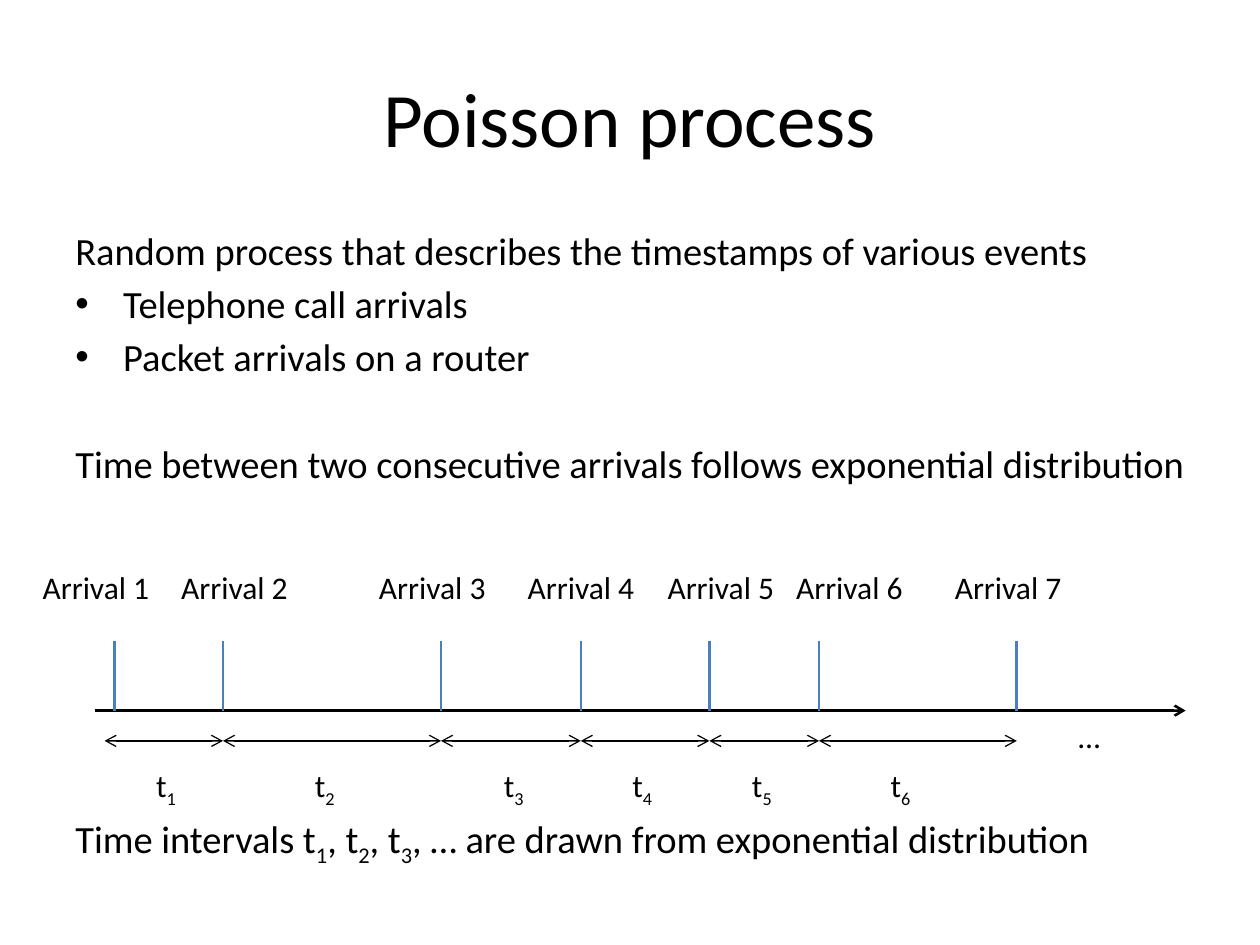
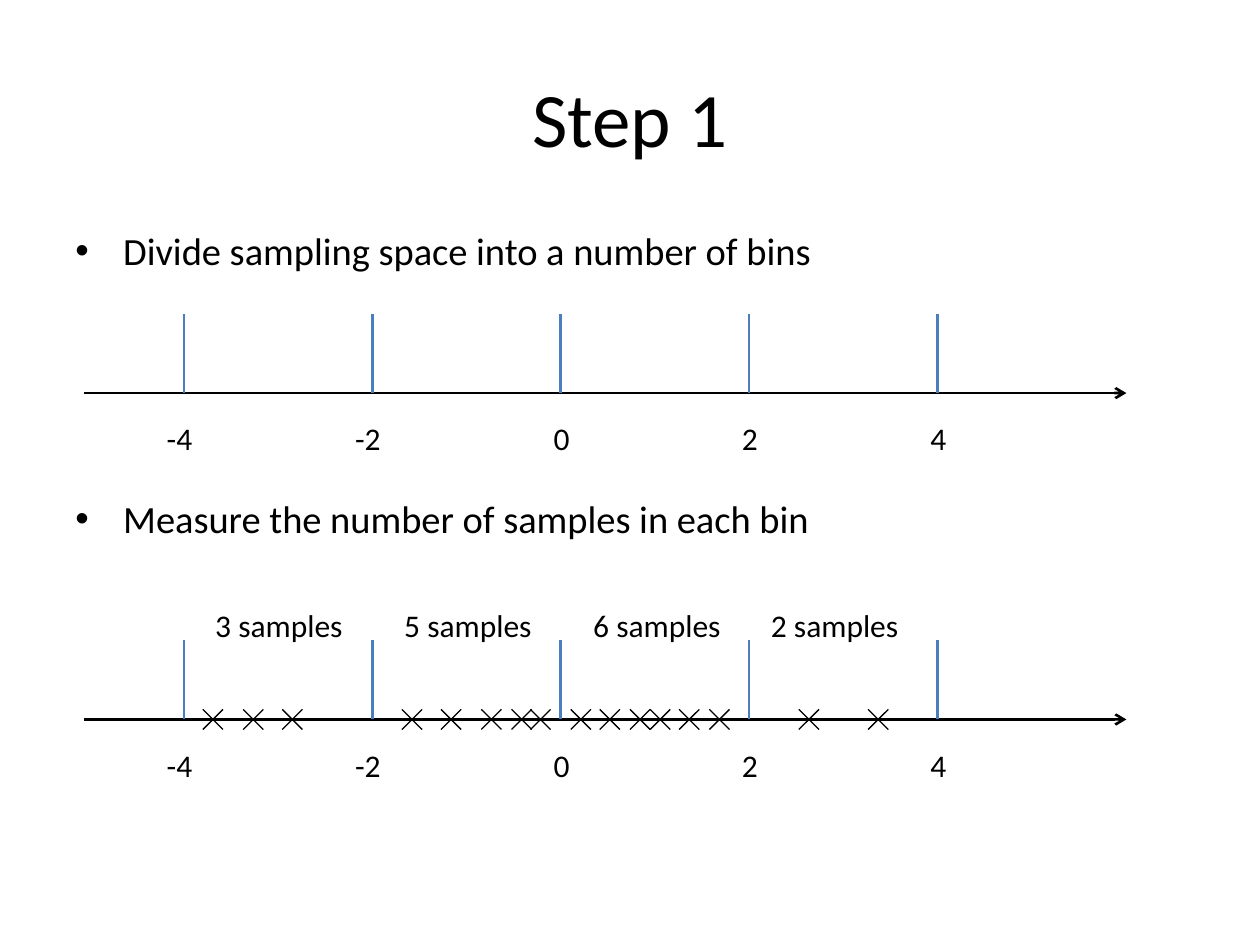
from lxml.etree import SubElement
from pptx import Presentation
from pptx.dml.color import RGBColor
from pptx.enum.shapes import MSO_CONNECTOR
from pptx.enum.text import MSO_ANCHOR, PP_ALIGN
from pptx.oxml.ns import qn
from pptx.util import Inches, Pt

BLACK = RGBColor(0x00, 0x00, 0x00)
TICK_BLUE = RGBColor(0x4B, 0x7E, 0xBC)
FONT = "Calibri"
TITLE_SIZE, BODY_SIZE, LABEL_SIZE = 44, 22, 18
LABEL_HEIGHT = 0.4
PARA_GAP = 3.9     # points between body paragraphs
LINE_PITCH = 30.75  # points from one body line to the next


def add_text(page, left, top, width, height, paras, size=LABEL_SIZE, hanging=False):
    """Add a text box; paras holds (text, skipped lines, bulleted), |n| is a subscript."""
    box = page.shapes.add_textbox(Inches(left), Inches(top), Inches(width), Inches(height))
    frame = box.text_frame
    frame.word_wrap = True
    for index, (text, skipped_lines, bulleted) in enumerate(paras):
        para = frame.paragraphs[0] if index == 0 else frame.add_paragraph()
        if index:
            para.space_before = Pt(PARA_GAP + skipped_lines * LINE_PITCH)
        if hanging:
            properties = para._p.get_or_add_pPr()
            properties.set("marL", str(Inches(0.38)))
            properties.set("indent", str(Inches(-0.38)))
            if bulleted:
                SubElement(properties, qn("a:buFont"), typeface="Arial")
                SubElement(properties, qn("a:buChar"), char="•")
        for position, piece in enumerate(text.split("|")):
            if not piece:
                continue
            span = para.add_run()
            span.text = piece
            span.font.name = FONT
            span.font.size = Pt(size)
            span.font.color.rgb = BLACK
            if position % 2:
                span._r.get_or_add_rPr().set("baseline", "-25000")
    return frame


def add_line(page, start, end, color=BLACK, weight=1.5, arrows=()):
    """Add a straight line; arrows names its arrow ends, headEnd before tailEnd."""
    line = page.shapes.add_connector(
        MSO_CONNECTOR.STRAIGHT, *[Inches(value) for value in (*start, *end)])
    line.line.color.rgb = color
    line.line.width = Pt(weight)
    outline = line.line._get_or_add_ln()
    for arrow in arrows:
        SubElement(outline, qn(f"a:{arrow}"), type="arrow")
    SubElement(line._element.spPr, qn("a:effectLst"))


deck = Presentation()
deck.slide_width = Inches(10)
deck.slide_height = Inches(7.5)

# Titles and body text of both slides
contents = [
    ("Poisson process", 9.07, 5.46, [
        ("Random process that describes the timestamps of various events", 0, False),
        ("Telephone call arrivals", 0, True),
        ("Packet arrivals on a router", 0, True),
        ("Time between two consecutive arrivals follows exponential distribution", 1, False),
        ("Time intervals t|1|, t|2|, t|3|, … are drawn from exponential distribution", 6, False),
    ]),
    ("Step 1", 9, 4.95, [
        ("Divide sampling space into a number of bins", 0, True),
        ("Measure the number of samples in each bin", 4, True),
    ]),
]
pages = []
for title, body_width, body_height, body in contents:
    page = deck.slides.add_slide(deck.slide_layouts[6])
    frame = add_text(page, 0.5, 0.3, 9, 1.25, [(title, 0, False)], TITLE_SIZE)
    frame.vertical_anchor = MSO_ANCHOR.MIDDLE
    frame.paragraphs[0].alignment = PP_ALIGN.CENTER
    add_text(page, 0.5, 1.75, body_width, body_height, body, BODY_SIZE, hanging=True)
    pages.append(page)
poisson_page, bins_page = pages

# Slide 1: time axis with arrivals
axis_y, interval_y = 5.64, 5.88
arrivals = [0.91, 1.77, 3.5, 4.61, 5.63, 6.5, 8.07]
arrival_label_lefts = [0.24, 1.34, 2.91, 4.09, 5.2, 6.22, 7.48]
add_line(poisson_page, (0.75, axis_y), (9.41, axis_y), arrows=["tailEnd"])
for number, (x, label_left) in enumerate(zip(arrivals, arrival_label_lefts), 1):
    add_line(poisson_page, (x, axis_y), (x, 5.09), TICK_BLUE)
    add_text(poisson_page, label_left, 4.46, 1.14, LABEL_HEIGHT,
             [(f"Arrival {number}", 0, False)])

# Slide 1: intervals between arrivals
interval_edges = [0.83] + arrivals[1:]
interval_label_lefts = [1.14, 2.4, 3.9, 4.92, 5.87, 6.97]
intervals = zip(interval_edges, interval_edges[1:], interval_label_lefts)
for number, (left, right, label_left) in enumerate(intervals, 1):
    add_line(poisson_page, (left, interval_y), (right, interval_y),
             weight=0.75, arrows=["headEnd", "tailEnd"])
    add_text(poisson_page, label_left, 6.03, 0.47, LABEL_HEIGHT,
             [(f"t|{number}|", 0, False)])
add_text(poisson_page, 8.46, 5.64, 0.47, LABEL_HEIGHT, [("…", 0, False)])

# Slide 2: the same binned axis, empty and with samples
bins_axis_y, samples_axis_y = 3.12, 5.71
first_edge, bin_width = 1.46, 1.495
for axis_y in (bins_axis_y, samples_axis_y):
    add_line(bins_page, (0.67, axis_y), (8.94, axis_y), arrows=["tailEnd"])
    for index, value in enumerate(range(-4, 5, 2)):
        x = first_edge + index * bin_width
        add_line(bins_page, (x, axis_y), (x, axis_y - 0.63), TICK_BLUE)
        label_width = 0.47 if value < 0 else 0.31
        add_text(bins_page, x - label_width / 2, axis_y + 0.16, label_width, LABEL_HEIGHT,
                 [(str(value), 0, False)])

# Slide 2: crosses for the samples
cross = 0.16
cross_top, cross_bottom = samples_axis_y - cross / 2, samples_axis_y + cross / 2
sample_lefts = [1.61, 1.93, 2.24, 3.19, 3.5, 3.82, 4.06, 4.21,
                4.53, 4.76, 5, 5.16, 5.39, 5.63, 6.34, 6.89]
for left in sample_lefts:
    right = left + cross
    add_line(bins_page, (left, cross_top), (right, cross_bottom), weight=0.75)
    add_line(bins_page, (right, cross_top), (left, cross_bottom), weight=0.75)

# Slide 2: sample counts
for left, count in [(1.61, 3), (3.11, 5), (4.61, 6), (6.02, 2)]:
    add_text(bins_page, left, 4.76, 1.26, LABEL_HEIGHT, [(f"{count} samples", 0, False)])

deck.save("out.pptx")
